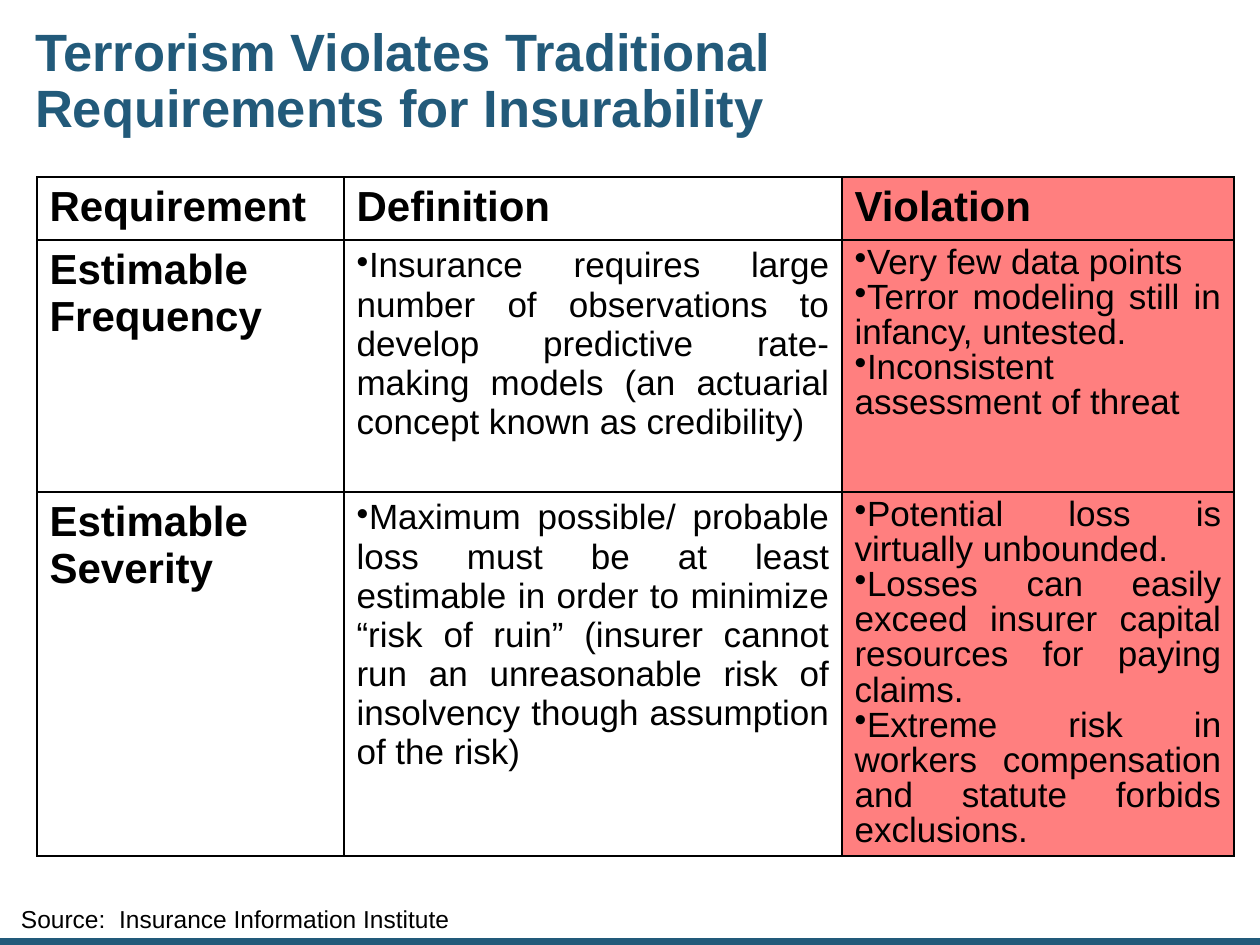
from lxml import etree
from pptx import Presentation
from pptx.dml.color import RGBColor
from pptx.enum.shapes import MSO_SHAPE
from pptx.enum.text import MSO_ANCHOR, MSO_AUTO_SIZE, PP_ALIGN
from pptx.oxml.ns import qn
from pptx.util import Emu, Pt

RECT = MSO_SHAPE.RECTANGLE
MIDDLE = MSO_ANCHOR.MIDDLE
FIXED = MSO_AUTO_SIZE.NONE
LEFT = PP_ALIGN.LEFT
FULL = PP_ALIGN.JUSTIFY
BLUE = RGBColor(0x22, 0x5A, 0x7A)
BLACK = RGBColor(0, 0, 0)
RED = RGBColor(0xFF, 0, 0)

COLS = [307, 498, 392]
ROWS = [63, 252, 346]
HEADS = ["Requirement", "Definition", "Violation"]
BODY = [
    (["Estimable", "Frequency"],
     ["Insurance requires large number of observations to develop predictive "
      "rate-making models (an actuarial concept known as credibility)"],
     ["Very few data points",
      "Terror modeling still in infancy, untested.",
      "Inconsistent assessment of threat"]),
    (["Estimable", "Severity"],
     ["Maximum possible/ probable loss must be at least estimable in order to "
      "minimize “risk of ruin” (insurer cannot run an unreasonable risk of "
      "insolvency though assumption of the risk)"],
     ["Potential loss is virtually unbounded.",
      "Losses can easily exceed insurer capital resources for paying claims.",
      "Extreme risk in workers compensation and statute forbids exclusions."]),
]


def px(count):
    return Emu(round(count * 914400 / 126))


def sub(node, tag, **attrs):
    return etree.SubElement(node, qn(tag), attrs)


class Deck:
    font = "Arial"

    def __init__(self):
        self.prs = Presentation()
        self.prs.slide_width = px(1260)
        self.prs.slide_height = px(945)
        self.slide = self.prs.slides.add_slide(self.prs.slide_layouts[5])

    def text(self, frame, lines, size, color=BLACK, bold=False, align=LEFT,
             space=1.0, bullet=False):
        for index, line in enumerate(lines):
            para = frame.add_paragraph() if index else frame.paragraphs[0]
            if bullet:
                props = para._p.get_or_add_pPr()
                sub(props, "a:buChar", char="•")
                tabs = sub(props, "a:tabLst")
                sub(tabs, "a:tab", pos=str(px(32)), algn="l")
            para.alignment = align
            para.line_spacing = space
            run = para.add_run()
            run.text = line
            run.font.name = self.font
            run.font.size = Pt(size)
            run.font.bold = bold
            run.font.color.rgb = color

    def title(self, text, x, y, w, h):
        shape = self.slide.shapes.title
        shape.left, shape.top, shape.width, shape.height = map(px, (x, y, w, h))
        frame = shape.text_frame
        frame.auto_size = FIXED
        frame.word_wrap = True
        frame.vertical_anchor = MIDDLE
        frame.margin_left = frame.margin_right = px(6)
        frame.margin_top = frame.margin_bottom = px(6)
        self.text(frame, [text], 30, BLUE, True, space=0.9)

    def bar(self, x, y, w, h):
        shape = self.slide.shapes.add_shape(RECT, *map(px, (x, y, w, h)))
        shape.shadow.inherit = False
        shape.fill.solid()
        shape.fill.fore_color.rgb = BLUE
        shape.line.fill.background()

    def note(self, text, x, y, w, h):
        frame = self.slide.shapes.add_textbox(*map(px, (x, y, w, h))).text_frame
        frame.word_wrap = True
        frame.margin_left = frame.margin_right = 0
        frame.margin_top = frame.margin_bottom = 0
        self.text(frame, [text], 14, space=0.75)

    def paint(self, cell, shade):
        props = cell._tc.get_or_add_tcPr()
        for tag in ("a:lnL", "a:lnR", "a:lnT", "a:lnB"):
            line = sub(props, tag, w=str(Pt(1)))
            sub(sub(line, "a:solidFill"), "a:srgbClr", val=str(BLACK))
        if shade:
            cell.fill.solid()
            cell.fill.fore_color.rgb = RED
            tint = props.find(qn("a:solidFill")).find(qn("a:srgbClr"))
            sub(tint, "a:alpha", val="50000")
        else:
            cell.fill.background()

    def table(self, rows, x, y):
        size = map(px, (x, y, sum(COLS), sum(ROWS)))
        grid = self.slide.shapes.add_table(len(ROWS), len(COLS), *size).table
        grid.first_row = False
        grid.horz_banding = False
        for col, width in zip(grid.columns, COLS):
            col.width = px(width)
        for row, height in zip(grid.rows, ROWS):
            row.height = px(height)
        for r, row in enumerate(rows):
            for c, lines in enumerate(row):
                cell = grid.cell(r, c)
                head = r == 0 or c == 0
                last = c == len(COLS) - 1
                self.paint(cell, last)
                self.text(cell.text_frame, lines, 24 if head else 20,
                          bold=head, align=FULL, bullet=not head,
                          space=0.9 if last and not head else 1.0)


def main():
    deck = Deck()
    deck.bar(0, 938, 1260, 7)
    deck.title("Terrorism Violates Traditional Requirements for Insurability",
               29, 4, 1050, 157)
    deck.table([[[head] for head in HEADS], *BODY], 37, 177)
    deck.note("Source:  Insurance Information Institute", 21, 911, 917, 44)
    deck.prs.save("out.pptx")


if __name__ == "__main__":
    main()
